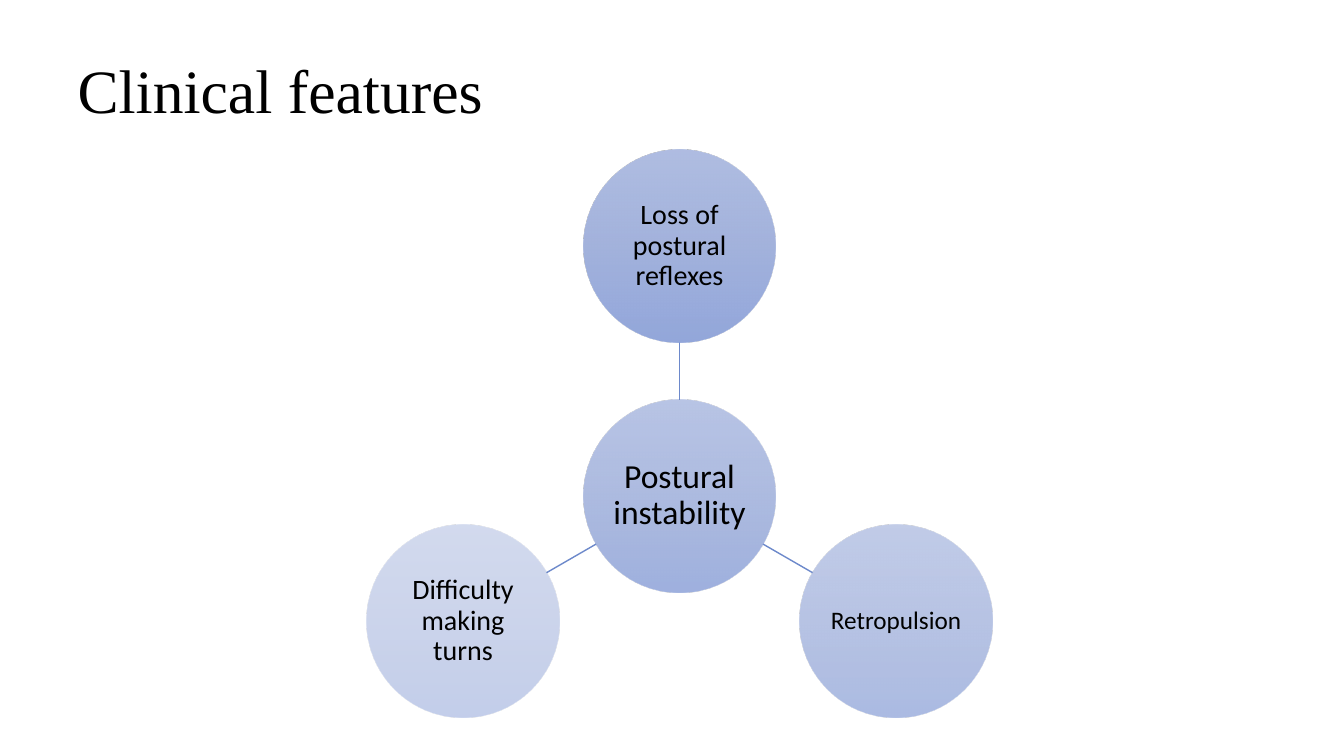
import math

from pptx import Presentation
from pptx import util as u
from pptx.dml import color
from pptx.enum import shapes, text
from pptx.oxml import ns
from lxml import etree

GRADIENT = [(0, "A8B7DF"), (50, "9AABD9"), (100, "889ED7")]
HUB_X, HUB_Y = 6.74, 4.92
DIAMETER, ORBIT = 1.91, 2.48


def rgb(value):
    return color.RGBColor.from_string(value)


def add_circle(slide, label, x, y, size, opacity):
    """Draw a labelled circle centred on x, y with a translucent gradient."""
    circle = slide.shapes.add_shape(
        shapes.MSO_SHAPE.OVAL, u.Inches(x - DIAMETER / 2), u.Inches(y - DIAMETER / 2),
        u.Inches(DIAMETER), u.Inches(DIAMETER))
    circle.shadow.inherit = False
    circle.line.fill.background()
    circle.fill.gradient()
    circle.fill.gradient_angle = 270
    stops = circle._element.spPr.find(".//" + ns.qn("a:gsLst"))
    for stop in list(stops):
        stops.remove(stop)
    for position, shade in GRADIENT:
        stop = etree.SubElement(stops, ns.qn("a:gs"), pos=str(position * 1000))
        tint = etree.SubElement(stop, ns.qn("a:srgbClr"), val=shade)
        etree.SubElement(tint, ns.qn("a:alpha"), val=str(opacity * 1000))

    frame = circle.text_frame
    frame.word_wrap = True
    frame.vertical_anchor = text.MSO_ANCHOR.MIDDLE
    frame.margin_left = frame.margin_right = u.Inches(0.01)
    frame.margin_top = frame.margin_bottom = u.Inches(0.01)
    frame.text = label
    paragraph = frame.paragraphs[0]
    paragraph.alignment = text.PP_ALIGN.CENTER
    paragraph.line_spacing = 0.9
    paragraph.font.name = "Calibri"
    paragraph.font.size = u.Pt(size)
    paragraph.font.color.rgb = rgb("000000")


presentation = Presentation()
presentation.slide_width = u.Inches(13.33)
presentation.slide_height = u.Inches(7.5)
slide = presentation.slides.add_slide(presentation.slide_layouts[5])

# Title
title = slide.shapes.title
title.left, title.top = u.Inches(0.67), u.Inches(0.3)
title.width, title.height = u.Inches(12), u.Inches(1.25)
title.text_frame.text = "Clinical features"
title.text_frame.vertical_anchor = text.MSO_ANCHOR.MIDDLE
heading = title.text_frame.paragraphs[0]
heading.alignment = text.PP_ALIGN.LEFT
heading.line_spacing = 0.9
heading.font.name = "Times New Roman"
heading.font.size = u.Pt(44)
heading.font.color.rgb = rgb("000000")

# Hub
add_circle(slide, "Postural instability", HUB_X, HUB_Y, 24, 80)

# Features on a ring around the hub, each joined by a spoke
features = [
    ("Loss of postural reflexes", 20, 90),
    ("Retropulsion", 18, 70),
    ("Difficulty making turns", 20, 50),
]
for index, (label, size, opacity) in enumerate(features):
    angle = math.radians(-90 + index * 360 / len(features))
    across, down = math.cos(angle), math.sin(angle)
    start, end = DIAMETER / 2, ORBIT - DIAMETER / 2
    spoke = slide.shapes.add_connector(
        shapes.MSO_CONNECTOR.STRAIGHT,
        u.Inches(HUB_X + start * across), u.Inches(HUB_Y + start * down),
        u.Inches(HUB_X + end * across), u.Inches(HUB_Y + end * down))
    spoke.line.color.rgb = rgb("6D89CB")
    spoke.line.width = u.Pt(1)
    etree.SubElement(spoke._element.spPr, ns.qn("a:effectLst"))
    add_circle(slide, label, HUB_X + ORBIT * across, HUB_Y + ORBIT * down, size, opacity)

presentation.save("out.pptx")
